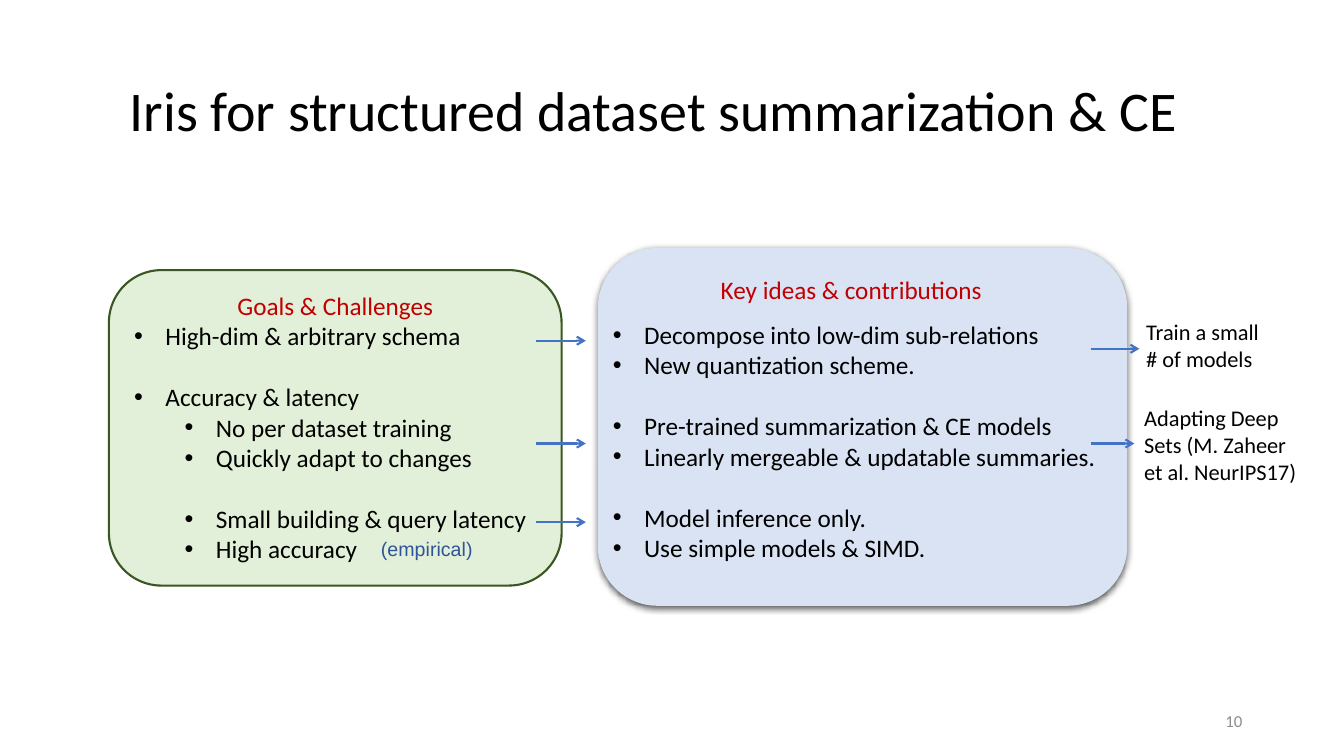
from dataclasses import dataclass
from lxml.etree import SubElement as Sub
from pptx import Presentation
from pptx.dml.color import RGBColor as RGB
from pptx.enum.shapes import MSO_CONNECTOR as Wire, MSO_SHAPE as Form
from pptx.enum.text import MSO_ANCHOR as Anchor, PP_ALIGN as Align
from pptx.oxml.ns import qn
from pptx.util import Inches, Pt


@dataclass(frozen=True)
class Theme:
    font: str = "Calibri"
    alt: str = "Arial"
    ink: str = "000000"
    red: str = "C00000"
    blue: str = "2F5597"
    wire: str = "4472C4"
    gray: str = "8C8C8C"
    green: str = "E2F0D9"
    edge: str = "385723"
    pale: str = "DAE3F3"
    title: int = 40
    body: int = 18
    side: int = 16
    note: int = 14
    num: int = 12
    line: float = 1.5
    gap: int = 22


T = Theme()
GOALS = [
    ("High-dim & arbitrary schema", 0, False),
    ("Accuracy & latency", 0, True),
    ("No per dataset training", 1, False),
    ("Quickly adapt to changes", 1, False),
    ("Small building & query latency", 1, True),
    ("High accuracy", 1, False),
]
IDEAS = [
    ("Decompose into low-dim sub-relations", 0, False),
    ("New quantization scheme.", 0, False),
    ("Pre-trained summarization & CE models", 0, True),
    ("Linearly mergeable & updatable summaries.", 0, False),
    ("Model inference only.", 0, True),
    ("Use simple models & SIMD.", 0, False),
]


def style(para, text, size, color, font=T.font, align=Align.LEFT):
    para.text = text
    para.alignment = align
    para.font.size = Pt(size)
    para.font.name = font
    para.font.color.rgb = RGB.from_string(color)


def label(slide, box, lines, size, color=T.ink, font=T.font,
          align=Align.LEFT, anchor=Anchor.TOP):
    shape = slide.shapes.add_textbox(*map(Inches, box))
    frame = shape.text_frame
    frame.word_wrap = True
    frame.vertical_anchor = anchor
    for i, text in enumerate(lines):
        para = frame.add_paragraph() if i else frame.paragraphs[0]
        style(para, text, size, color, font, align)
    return shape


def panel(slide, box, fill):
    shape = slide.shapes.add_shape(Form.ROUNDED_RECTANGLE, *map(Inches, box))
    shape.shadow.inherit = False
    shape.fill.solid()
    shape.fill.fore_color.rgb = RGB.from_string(fill)
    shape.line.fill.background()
    return shape


def shade(shape):
    effect = shape._element.spPr.find(qn("a:effectLst"))
    outer = Sub(effect, qn("a:outerShdw"), blurRad=str(Pt(4.5)),
                dist=str(Pt(1.5)), dir="5400000", rotWithShape="0")
    color = Sub(outer, qn("a:srgbClr"), val=T.ink)
    Sub(color, qn("a:alpha"), val="63000")


def bullets(frame, items):
    for text, level, gap in items:
        para = frame.add_paragraph()
        style(para, text, T.body, T.ink)
        para.level = level
        if gap:
            para.space_before = Pt(T.gap)
        props = para._p.get_or_add_pPr()
        props.set("marL", str(Inches(0.31 + 0.5 * level)))
        props.set("indent", str(Inches(-0.31)))
        Sub(props, qn("a:buFont"), typeface=T.alt)
        Sub(props, qn("a:buChar"), char="•")


def arrow(slide, left, top, width):
    line = slide.shapes.add_connector(
        Wire.STRAIGHT, *map(Inches, (left, top, left + width, top)))
    line.line.color.rgb = RGB.from_string(T.wire)
    line.line.width = Pt(T.line)
    Sub(line.line._get_or_add_ln(), qn("a:tailEnd"), type="arrow")
    Sub(line._element.spPr, qn("a:effectLst"))
    return line


def goals(slide, box):
    left, top, width, height = box
    shape = panel(slide, box, T.green)
    shape.line.color.rgb = RGB.from_string(T.edge)
    shape.line.width = Pt(T.line)
    frame = shape.text_frame
    frame.word_wrap = True
    frame.vertical_anchor = Anchor.TOP
    style(frame.paragraphs[0], "Goals & Challenges", T.body, T.red,
          align=Align.CENTER)
    bullets(frame, GOALS)
    label(slide, (left + 2.6, top + 2.6, 1.52, 0.34), ["(empirical)"],
          T.note, T.blue, T.alt)
    for drop in (0.7, 1.72, 2.5):
        arrow(slide, left + 4.24, top + drop, 0.49)


def ideas(slide, box):
    left, top, width, height = box
    shade(panel(slide, box, T.pale))
    text = label(slide, (left + 0.05, top + 0.06, width + 0.05, height - 0.12),
                 ["Key ideas & contributions"], T.body, T.red)
    frame = text.text_frame
    head = frame.paragraphs[0]
    head._p.get_or_add_pPr().set("marL", str(Inches(1.07)))
    bullets(frame, IDEAS)
    for para in frame.paragraphs[:2]:
        para.line_spacing = 1.5


def notes(slide, box):
    left, top, width, height = box
    label(slide, (left + 0.02, top, width, 0.64),
          ["Train a small", "# of models"], T.side)
    sets = label(slide, (left, top + 0.85, width, 0.88),
                 ["Adapting Deep", "Sets (M. Zaheer", "et al. NeurIPS17)"],
                 T.side)
    arrow(slide, left - 0.43, top + 0.35, 0.48)
    arrow(slide, left - 0.43, top + 1.29, 0.43).end_connect(sets, 1)


def header(slide, box):
    text = label(slide, box, ["Iris for structured dataset summarization & CE"],
                 T.title, align=Align.CENTER, anchor=Anchor.MIDDLE)
    text.text_frame.paragraphs[0].line_spacing = 0.9


def footer(slide, box):
    label(slide, box, ["10"], T.num, T.gray, align=Align.RIGHT,
          anchor=Anchor.MIDDLE)


def main():
    deck = Presentation()
    deck.slide_width = Inches(13.33)
    deck.slide_height = Inches(7.5)
    slide = deck.slides.add_slide(deck.slide_layouts[6])
    header(slide, (0.73, 0.4, 11.5, 1.45))
    goals(slide, (1.08, 2.68, 4.49, 3.13))
    ideas(slide, (5.93, 2.46, 5.25, 3.55))
    notes(slide, (11.25, 3.11, 2.05, 1.73))
    footer(slide, (9.42, 6.95, 3, 0.4))
    deck.save("out.pptx")


if __name__ == "__main__":
    main()
